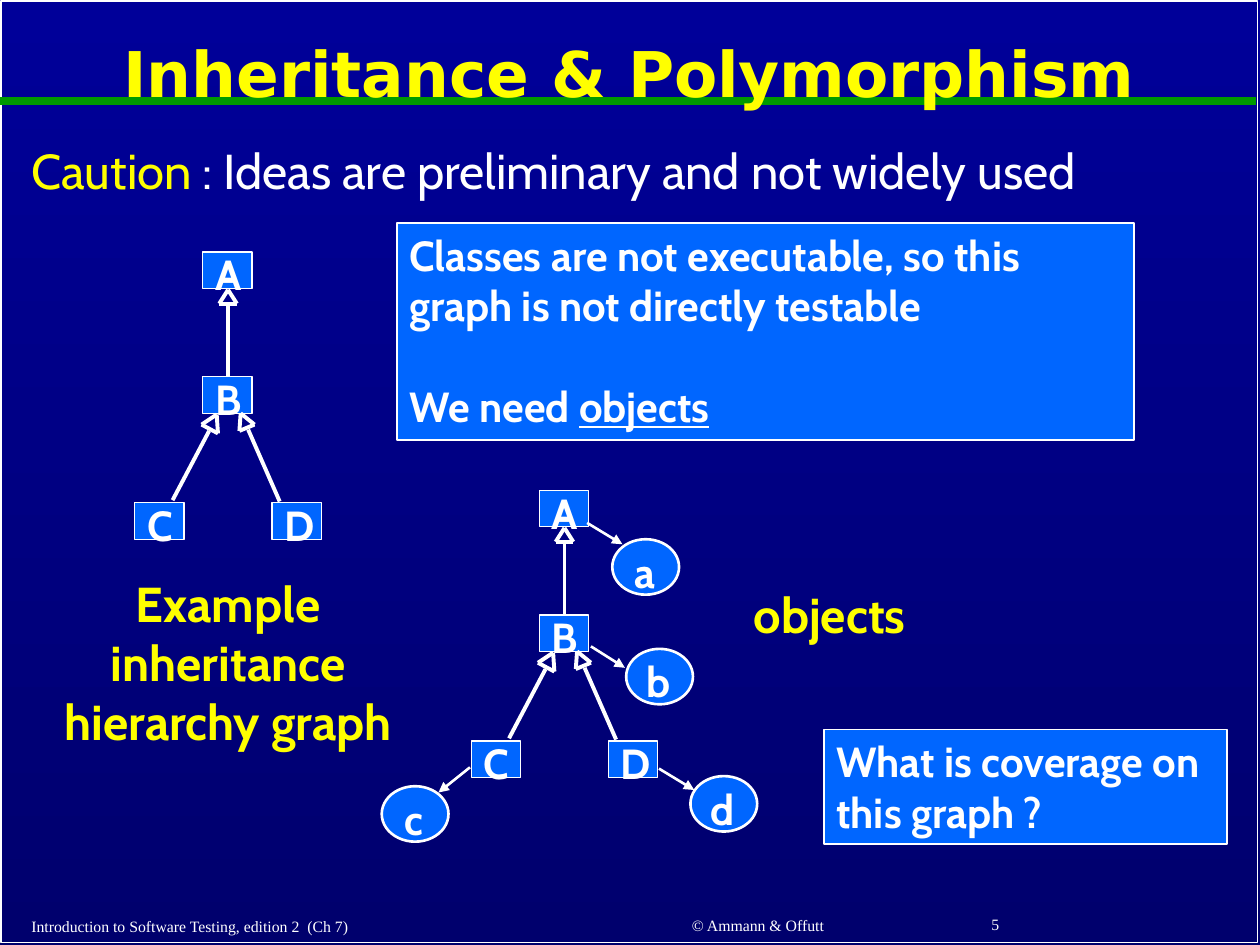
from itertools import combinations

from lxml.etree import SubElement
from pptx import Presentation
from pptx.dml.color import RGBColor
from pptx.enum.shapes import MSO_CONNECTOR as CONNECTOR, MSO_SHAPE as SHAPE
from pptx.enum.text import MSO_ANCHOR as ANCHOR, PP_ALIGN as ALIGN
from pptx.oxml.ns import qn
from pptx.util import Pt

PX = 9144
WHITE, YELLOW, BLUE, GREEN = "FFFFFF", "FFFF00", "0066FF", "009900"
BODY, HEADING, SERIF = "Cabin", "DejaVu Sans", "Times New Roman"


def color(value):
    return RGBColor.from_string(value)


def emu(*lengths):
    return [length * PX for length in lengths]


def style_paragraph(paragraph, size, ink=WHITE, font=BODY, bold=True, align=ALIGN.LEFT):
    paragraph.alignment = align
    paragraph.font.size = Pt(size)
    paragraph.font.name = font
    paragraph.font.bold = bold
    paragraph.font.color.rgb = color(ink)


def add_text(shapes, box, text, size, wrap=True, anchor=ANCHOR.MIDDLE, **style):
    frame = shapes.add_textbox(*emu(*box)).text_frame
    frame.word_wrap = wrap
    frame.vertical_anchor = anchor
    paragraph = frame.paragraphs[0]
    paragraph.text = text
    style_paragraph(paragraph, size, **style)
    return paragraph


def add_shape(shapes, kind, box, line_width, fill=BLUE):
    shape = shapes.add_shape(kind, *emu(*box))
    shape.shadow.inherit = False
    shape.line.color.rgb = color(WHITE)
    shape.line.width = Pt(line_width)
    if fill:
        shape.fill.solid()
        shape.fill.fore_color.rgb = color(fill)
    else:
        shape.fill.background()
    return shape


def add_line(shapes, start, end, width, ink=WHITE, arrow=False):
    line = shapes.add_connector(CONNECTOR.STRAIGHT, *emu(*start, *end))
    line.line.color.rgb = color(ink)
    line.line.width = Pt(width)
    if arrow:
        SubElement(line.line._get_or_add_ln(), qn("a:tailEnd"), type="triangle")
    SubElement(line._element.spPr, qn("a:effectLst"))


def draw_frame(slide):
    fill = slide.background.fill
    fill.gradient()
    fill.gradient_angle = 270
    for stop, value in zip(fill.gradient_stops, ("000099", "00006D")):
        stop.color.rgb = color(value)
    add_shape(slide.shapes, SHAPE.RECTANGLE, (1, 1, 997, 747), 1, fill=None)
    add_line(slide.shapes, (0, 80), (997, 80), 4.5, GREEN)


def draw_heading(slide):
    title = add_text(slide.shapes, (13, 11, 973, 100), "Inheritance & Polymorphism", 36,
                     ink=YELLOW, font=HEADING, align=ALIGN.CENTER)
    title.line_spacing = 0.9
    caution = add_text(slide.shapes, (15, 112, 970, 608), "Caution", 28,
                       anchor=ANCHOR.TOP, bold=False)
    caution.runs[0].font.color.rgb = color(YELLOW)
    caution.add_run().text = " : Ideas are preliminary and not widely used"
    caution.line_spacing = 0.9


def draw_footer(slide):
    for box, text, align in (
        ((15, 722, 411, 26), "Introduction to Software Testing, edition 2  (Ch 7)", ALIGN.LEFT),
        ((443, 721, 317, 26), "© Ammann & Offutt", ALIGN.CENTER),
        ((777, 720, 208, 27), "5", ALIGN.LEFT),
    ):
        add_text(slide.shapes, box, text, 9, wrap=False, font=SERIF, bold=False, align=align)


def draw_callout(slide, box, texts):
    frame = add_shape(slide.shapes, SHAPE.RECTANGLE, box, 1).text_frame
    frame.word_wrap = True
    frame.vertical_anchor = ANCHOR.TOP
    for index, text in enumerate(texts):
        paragraph = frame.add_paragraph() if index else frame.paragraphs[0]
        paragraph.text = text
        paragraph.space_before = Pt(29 if index else 0)
        style_paragraph(paragraph, 24)
    return paragraph


def draw_hierarchy(shapes, left, top):
    def at(x, y):
        return left + x, top + y

    for name, x, y in (("A", 54, 0), ("B", 54, 99), ("C", 0, 199), ("D", 109, 199)):
        add_shape(shapes, SHAPE.RECTANGLE, (*at(x, y), 39, 29), 0.75)
        add_text(shapes, (*at(x, y - 8), 39, 51), name, 24, align=ALIGN.CENTER)
    for head, stem in (
        (((67, 41), (81, 41), (74, 30)), ((74, 43), (74, 99))),
        (((53, 137), (66, 144), (65, 129)), ((59, 142), (30, 197))),
        (((83, 142), (95, 137), (84, 128)), ((90, 141), (115, 198))),
    ):
        for start, end in (*combinations(head, 2), stem):
            add_line(shapes, at(*start), at(*end), 2.25)


def draw_objects(shapes, left, top):
    def at(x, y):
        return left + x, top + y

    for name, corner, start, end in (
        ("a", (112, 39), (92, 26), (120, 43)),
        ("b", (123, 126), (95, 124), (122, 141)),
        ("c", (-71, 235), (-1, 220), (-26, 240)),
        ("d", (174, 227), (149, 221), (177, 238)),
    ):
        add_shape(shapes, SHAPE.OVAL, (*at(*corner), 53, 44), 1.5)
        add_text(shapes, (*at(*corner), 51, 51), name, 24, wrap=False, align=ALIGN.CENTER)
        add_line(shapes, at(*start), at(*end), 1.5, arrow=True)


def draw_label(shapes, box, text):
    add_text(shapes, box, text, 28, ink=YELLOW, align=ALIGN.CENTER)


def main():
    presentation = Presentation()
    presentation.slide_width, presentation.slide_height = emu(1000, 750)
    slide = presentation.slides.add_slide(presentation.slide_layouts[6])
    draw_frame(slide)
    draw_heading(slide)

    classes = slide.shapes.add_group_shape().shapes
    draw_label(classes, (18, 450, 326, 151), "Example inheritance hierarchy graph")
    draw_hierarchy(classes, 107, 200)

    need = draw_callout(slide, (315, 177, 585, 172), (
        "Classes are not executable, so this graph is not directly testable", "We need "))
    objects_run = need.add_run()
    objects_run.text = "objects"
    objects_run.font.underline = True

    instances = slide.shapes.add_group_shape().shapes
    draw_hierarchy(instances, 374, 389)
    draw_objects(instances, 374, 389)
    draw_label(instances, (572, 459, 173, 57), "objects")

    draw_callout(slide, (654, 579, 320, 91), ("What is coverage on this graph ?",))
    draw_footer(slide)
    presentation.save("out.pptx")


if __name__ == "__main__":
    main()
